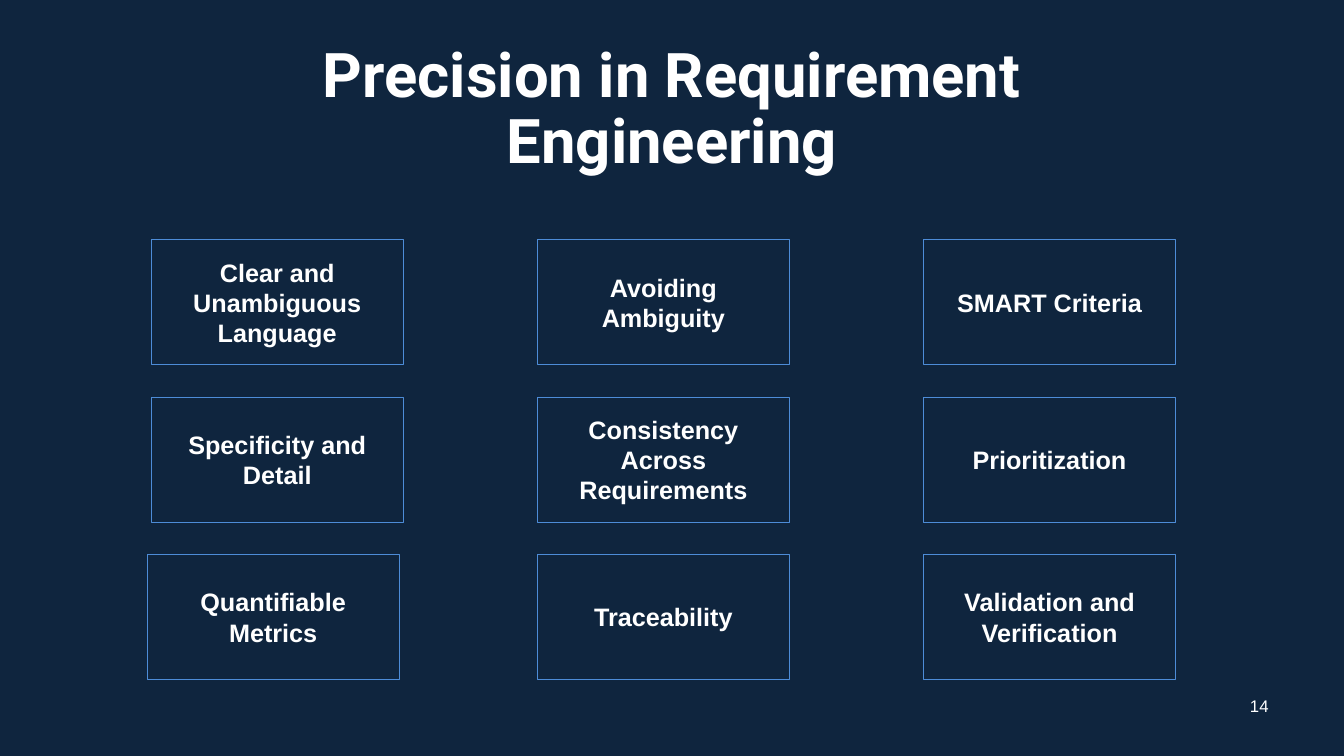
from pptx import Presentation
from pptx import util as u
from pptx.dml.color import RGBColor
from pptx.enum import shapes, text

THEME = {
    "background": RGBColor.from_string("0F253E"),
    "outline": RGBColor.from_string("4D8CD7"),
    "ink": RGBColor.from_string("FFFFFF"),
    "title_font": "Roboto",
    "body_font": "Arial",
    "title_size": 44,
    "card_size": 18,
    "number_size": 12,
}

deck = Presentation()
deck.slide_width = u.Inches(13.33)
deck.slide_height = u.Inches(7.5)
page = deck.slides.add_slide(deck.slide_layouts[6])
page.background.fill.solid()
page.background.fill.fore_color.rgb = THEME["background"]


def write(box, words, font, size, bold=True, anchor=text.MSO_ANCHOR.MIDDLE):
    frame = box.text_frame
    frame.word_wrap = True
    frame.vertical_anchor = anchor
    para = frame.paragraphs[0]
    para.alignment = text.PP_ALIGN.CENTER
    span = para.add_run()
    span.text = words
    span.font.name = font
    span.font.size = u.Pt(size)
    span.font.bold = bold
    span.font.color.rgb = THEME["ink"]
    return para


# Title
title = page.shapes.add_textbox(u.Inches(2.17), u.Inches(0.39), u.Inches(8.99), u.Inches(1.4))
heading = write(title, "Precision in Requirement Engineering", THEME["title_font"],
                THEME["title_size"], anchor=text.MSO_ANCHOR.TOP)
heading.line_spacing = 0.9

# Grid of practices, row by row
practices = [
    ["Clear and Unambiguous Language", "Avoiding Ambiguity", "SMART Criteria"],
    ["Specificity and Detail", "Consistency Across Requirements", "Prioritization"],
    ["Quantifiable Metrics", "Traceability", "Validation and Verification"],
]
grid_left, grid_top = 1.5, 2.38
column_step, row_step = 3.83, 1.56
card_width, card_height = 2.5, 1.24
nudges = {"Quantifiable Metrics": -0.04}  # this card sits slightly left of its column

for row, names in enumerate(practices):
    for column, name in enumerate(names):
        left = grid_left + column * column_step + nudges.get(name, 0)
        card = page.shapes.add_shape(
            shapes.MSO_SHAPE.RECTANGLE, u.Inches(left), u.Inches(grid_top + row * row_step),
            u.Inches(card_width), u.Inches(card_height))
        card.shadow.inherit = False
        card.fill.background()
        card.line.color.rgb = THEME["outline"]
        card.line.width = u.Pt(0.75)
        write(card, name, THEME["body_font"], THEME["card_size"])

# Page number
number = page.shapes.add_textbox(u.Inches(12.24), u.Inches(6.8), u.Inches(0.5), u.Inches(0.4))
write(number, "14", THEME["body_font"], THEME["number_size"], bold=False)

deck.save("out.pptx")
